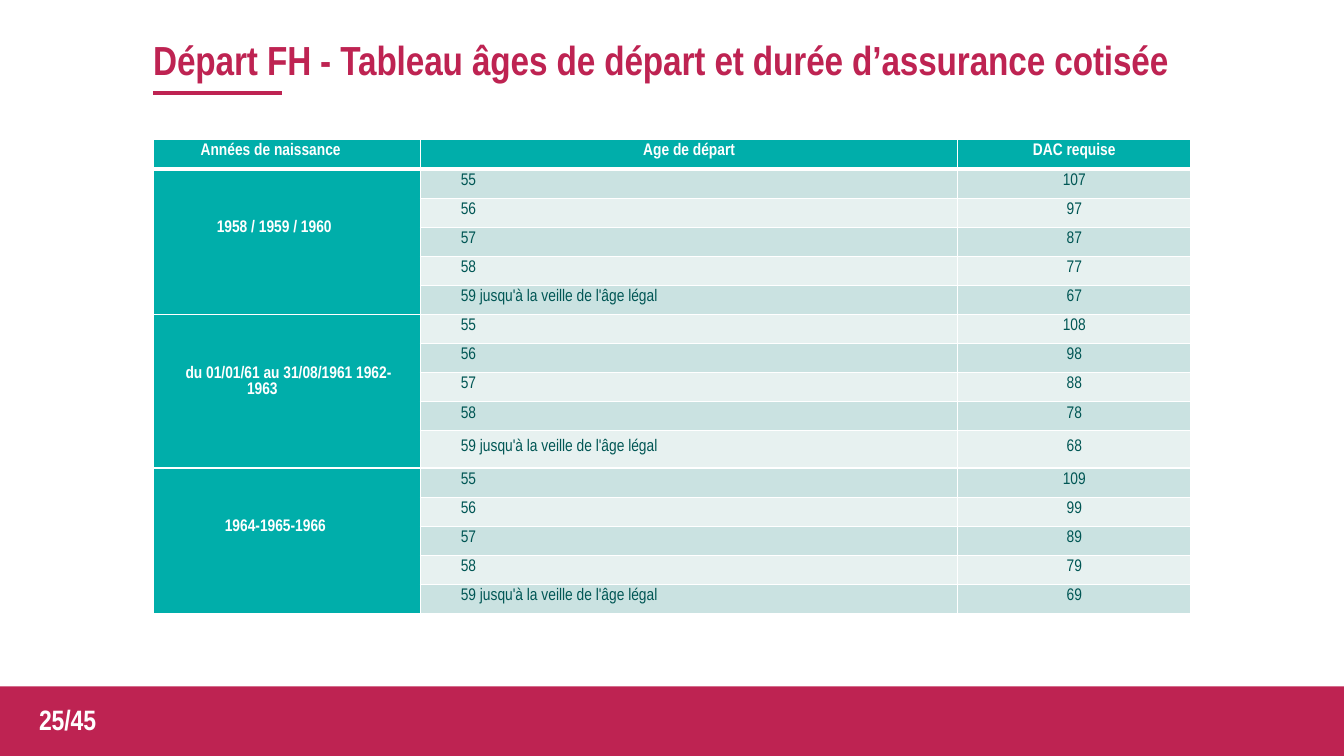
from lxml.etree import SubElement
from pptx import Presentation
from pptx.dml.color import RGBColor
from pptx.enum.shapes import MSO_CONNECTOR, MSO_SHAPE
from pptx.enum.text import MSO_ANCHOR, PP_ALIGN
from pptx.oxml.ns import qn
from pptx.util import Inches, Pt

TITLE = "Départ FH - Tableau âges de départ et durée d’assurance cotisée"
PAGE_NUMBER = "25/45"
HEADERS = ["Années de naissance", "Age de départ", "DAC requise"]
AGES = ["55", "56", "57", "58", "59 jusqu'à la veille de l'âge légal"]
COHORTS = [
    {"years": "1958 / 1959 / 1960", "indent": (0.63, 0), "durations": [107, 97, 87, 77, 67]},
    {"years": "du 01/01/61 au 31/08/1961 1962-1963", "indent": (0.93, -0.61),
     "durations": [108, 98, 88, 78, 68]},
    {"years": "1964-1965-1966", "indent": (0.71, 0), "durations": [109, 99, 89, 79, 69]},
]
COLORS = {"crimson": "BE2352", "teal": "00AEAA", "ink": "005654",
          "dark_band": "CAE2E1", "light_band": "E7F1F0", "white": "FFFFFF"}
FONT = "Arial Narrow"
LEFT, TABLE_TOP, TABLE_HEIGHT = 1.52, 1.38, 4.71
COLUMN_WIDTHS = [2.65, 5.33, 2.31]
HEADER_HEIGHT, TALL_HEIGHT, TALL_ROW = 0.3, 0.37, 10
BODY_ROWS = len(COHORTS) * len(AGES)
ROW_HEIGHT = (TABLE_HEIGHT - HEADER_HEIGHT - TALL_HEIGHT) / (BODY_ROWS - 1)


def rgb(name):
    return RGBColor.from_string(COLORS[name])


def style_text(para, size, color, bold=True, spacing=0):
    for span in para.runs:
        span.font.name = FONT
        span.font.size = Pt(size)
        span.font.bold = bold
        span.font.color.rgb = rgb(color)
        span.font._element.set("spc", str(spacing))


def add_text(page, bounds, text, size, color, align):
    box = page.shapes.add_textbox(*map(Inches, bounds))
    frame = box.text_frame
    frame.word_wrap = True
    frame.text = text
    para = frame.paragraphs[0]
    para.alignment = align
    style_text(para, size, color, spacing=-10)
    return frame


def set_borders(cell, top, bottom):
    properties = cell._tc.get_or_add_tcPr()
    for side, width in {"L": 1, "R": 1, "T": top, "B": bottom}.items():
        line = SubElement(properties, qn(f"a:ln{side}"), w=str(Pt(width)))
        fill = SubElement(line, qn("a:solidFill"))
        SubElement(fill, qn("a:srgbClr"), val=COLORS["white"])


def fill_cell(cell, text, fill, color="ink", bold=False, top=0.04,
              indent=(0, 0), align=PP_ALIGN.LEFT):
    cell.fill.solid()
    cell.fill.fore_color.rgb = rgb(fill)
    cell.margin_left = cell.margin_right = cell.margin_bottom = 0
    cell.margin_top = Inches(top)
    cell.text = text
    para = cell.text_frame.paragraphs[0]
    para.alignment = align
    properties = para._p.get_or_add_pPr()
    properties.set("marL", str(Inches(indent[0])))
    properties.set("indent", str(Inches(indent[1])))
    style_text(para, 12, color, bold)


def add_ages_table(page):
    frame = page.shapes.add_table(
        BODY_ROWS + 1, len(HEADERS), Inches(LEFT), Inches(TABLE_TOP),
        Inches(sum(COLUMN_WIDTHS)), Inches(TABLE_HEIGHT))
    table = frame.table
    for column, width in zip(table.columns, COLUMN_WIDTHS):
        column.width = Inches(width)
    heights = {0: HEADER_HEIGHT, TALL_ROW: TALL_HEIGHT}
    for index, row in enumerate(table.rows):
        row.height = Inches(heights.get(index, ROW_HEIGHT))
        for cell in row.cells:
            set_borders(cell, 3 if index == 1 else 1, 3 if index == 0 else 1)

    for column, header in enumerate(HEADERS):
        fill_cell(table.cell(0, column), header, "teal", "white", True,
                  indent=(0 if column else 0.47, 0),
                  align=PP_ALIGN.CENTER if column else PP_ALIGN.LEFT)

    for group, cohort in enumerate(COHORTS):
        first = 1 + group * len(AGES)
        years = table.cell(first, 0)
        years.merge(table.cell(first + len(AGES) - 1, 0))
        fill_cell(years, cohort["years"], "teal", "white", True,
                  top=0.51, indent=cohort["indent"])
        years.margin_right = Inches(0.1)
        for row, (age, duration) in enumerate(zip(AGES, cohort["durations"]), first):
            band = "dark_band" if row % 2 else "light_band"
            top = 0.08 if row == TALL_ROW else 0.04
            fill_cell(table.cell(row, 1), age, band, top=top, indent=(0.4, 0))
            fill_cell(table.cell(row, 2), str(duration), band, top=top,
                      align=PP_ALIGN.CENTER)


def main():
    """Build the slide of departure ages and required insurance periods."""
    deck = Presentation()
    deck.slide_width, deck.slide_height = Inches(13.33), Inches(7.5)
    page = deck.slides.add_slide(deck.slide_layouts[6])

    footer = page.shapes.add_shape(
        MSO_SHAPE.RECTANGLE, 0, Inches(6.81), deck.slide_width, Inches(0.69))
    footer.shadow.inherit = False
    footer.fill.solid()
    footer.fill.fore_color.rgb = rgb("crimson")
    footer.line.fill.background()

    title = add_text(page, (LEFT, 0.34, 10.26, 0.5), TITLE, 29, "crimson", PP_ALIGN.LEFT)
    title.margin_left = title.margin_right = title.margin_top = title.margin_bottom = 0
    title.vertical_anchor = MSO_ANCHOR.MIDDLE

    add_ages_table(page)
    add_text(page, (0.17, 6.92, 1, 0.44), PAGE_NUMBER, 20, "white", PP_ALIGN.CENTER)

    underline = page.shapes.add_connector(
        MSO_CONNECTOR.STRAIGHT, Inches(LEFT), Inches(0.92), Inches(2.8), Inches(0.92))
    underline.line.color.rgb = rgb("crimson")
    underline.line.width = Pt(3)
    SubElement(underline._element.spPr, qn("a:effectLst"))

    deck.save("out.pptx")


if __name__ == "__main__":
    main()
